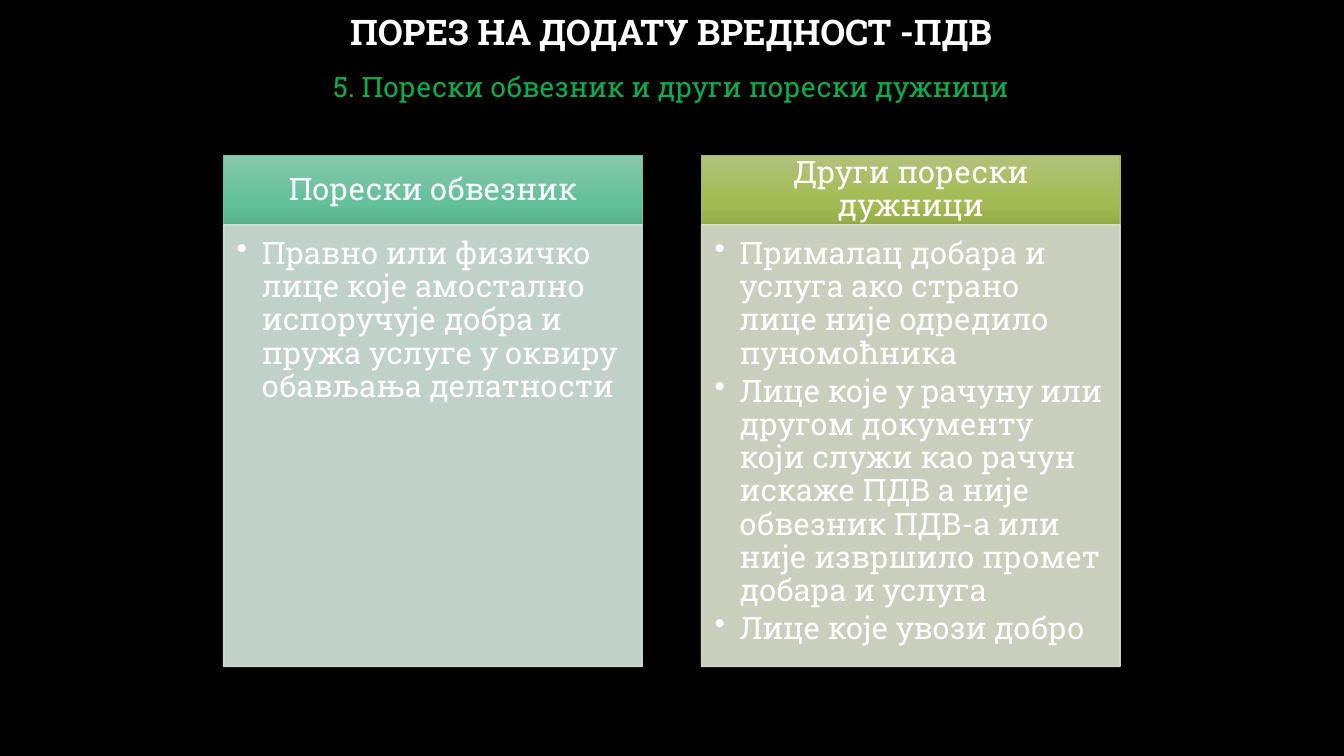
from copy import deepcopy

from lxml.etree import SubElement
from pptx import Presentation
from pptx.dml.color import RGBColor
from pptx.enum.shapes import MSO_SHAPE
from pptx.enum.text import MSO_ANCHOR, PP_ALIGN
from pptx.oxml.ns import qn
from pptx.util import Pt

FONT = "Roboto Slab"
COLORS = {
    "background": "000000",
    "text": "FFFFFF",
    "subtitle": "00B050",
    "shadow": "000000",
}
COLUMNS = [
    {
        "heading": "Порески обвезник",
        "items": [
            "Правно или физичко лице које амостално испоручује добра и пружа "
            "услуге у оквиру обављања делатности",
        ],
        "gradient": ["88C8AD", "62C09A", "57B08C"],
        "border": "70BF9F",
        "panel": "D5E8DF",
    },
    {
        "heading": "Други порески дужници",
        "items": [
            "Прималац добара и услуга ако страно лице није одредило пуномоћника",
            "Лице које у рачуну или другом документу који служи као рачун искаже "
            "ПДВ а није обвезник ПДВ-а или није извршило промет добара и услуга",
            "Лице које увози добро",
        ],
        "gradient": ["B1C27B", "A3BB51", "95AC48"],
        "border": "A5B960",
        "panel": "E1E6D2",
    },
]
STOPS = [0, 0.69, 1]
COLUMN_LEFT, COLUMN_STEP, COLUMN_WIDTH = 159.8, 341.3, 299
HEADING_TOP, HEADING_HEIGHT, PANEL_HEIGHT = 110.9, 49.7, 315.4


def add_text(sp, paragraphs, size=22, color=COLORS["text"], bold=False, bullets=False,
             anchor=MSO_ANCHOR.TOP, margins=(0, 0, 0, 0), spacing=0.9, before=0, after=0):
    tf = sp.text_frame
    tf.word_wrap = True
    tf.vertical_anchor = anchor
    tf.margin_left, tf.margin_top, tf.margin_right, tf.margin_bottom = map(Pt, margins)
    for i, text in enumerate(paragraphs):
        p = tf.add_paragraph() if i else tf.paragraphs[0]
        p.alignment = PP_ALIGN.LEFT if bullets else PP_ALIGN.CENTER
        p.line_spacing = spacing
        p.space_before, p.space_after = Pt(before), Pt(after)
        if bullets:
            pPr = p._p.get_or_add_pPr()
            pPr.set("marL", str(Pt(18)))
            pPr.set("indent", str(Pt(-18)))
            SubElement(pPr, qn("a:buChar"), char="•")
        r = p.add_run()
        r.text = text
        r.font.name, r.font.size, r.font.bold = FONT, Pt(size), bold
        r.font.color.rgb = RGBColor.from_string(color)


def add_block(left, top, height, colors, border, alpha=None):
    """Add a shadowed rectangle: three colors make a gradient, one a solid fill."""
    sp = s.shapes.add_shape(MSO_SHAPE.RECTANGLE, Pt(left), Pt(top), Pt(COLUMN_WIDTH), Pt(height))
    sp.line.color.rgb = RGBColor.from_string(border)
    sp.line.width = Pt(1)
    spPr = sp._element.spPr
    if len(colors) > 1:
        sp.fill.gradient()
        sp.fill.gradient_angle = 270
        gsLst = spPr.find(qn("a:gradFill")).find(qn("a:gsLst"))
        gsLst.append(deepcopy(gsLst[0]))
        for stop, position, color in zip(sp.fill.gradient_stops, STOPS, colors):
            stop.position = position
            stop.color.rgb = RGBColor.from_string(color)
    else:
        sp.fill.solid()
        sp.fill.fore_color.rgb = RGBColor.from_string(colors[0])
    if alpha:
        for clr in list(spPr.iter(qn("a:srgbClr"))):
            SubElement(clr, qn("a:alpha"), val=str(alpha * 1000))
    sp.shadow.inherit = False
    shadow = SubElement(spPr.find(qn("a:effectLst")), qn("a:outerShdw"), blurRad=str(Pt(4)),
                        dist=str(Pt(3)), dir="5400000", rotWithShape="0")
    clr = SubElement(shadow, qn("a:srgbClr"), val=COLORS["shadow"])
    SubElement(clr, qn("a:alpha"), val="54000")
    return sp


prs = Presentation()
prs.slide_width, prs.slide_height = Pt(960), Pt(540)
s = prs.slides.add_slide(prs.slide_layouts[6])
s.background.fill.solid()
s.background.fill.fore_color.rgb = RGBColor.from_string(COLORS["background"])

title = s.shapes.add_textbox(Pt(72), Pt(14.4), Pt(815), Pt(19.4))
add_text(title, ["ПОРЕЗ НА ДОДАТУ ВРЕДНОСТ -ПДВ"], size=25.2, bold=True, anchor=MSO_ANCHOR.MIDDLE)

subtitle = s.shapes.add_textbox(Pt(72), Pt(41), Pt(815), Pt(40))
add_text(subtitle, ["5. Порески обвезник и други порески дужници"], size=20,
         color=COLORS["subtitle"], margins=(7.2, 3.6, 7.2, 3.6), spacing=1.2, before=10)

for i, column in enumerate(COLUMNS):
    left = COLUMN_LEFT + i * COLUMN_STEP
    heading = add_block(left, HEADING_TOP, HEADING_HEIGHT, column["gradient"], column["border"])
    add_text(heading, [column["heading"]], anchor=MSO_ANCHOR.MIDDLE, margins=(12.3, 7, 12.3, 7))
    panel = add_block(left, HEADING_TOP + HEADING_HEIGHT, PANEL_HEIGHT,
                      [column["panel"]], column["panel"], alpha=90)
    add_text(panel, column["items"], bullets=True, margins=(9.3, 9.3, 12.3, 13.9), after=3.3)

prs.save("out.pptx")
